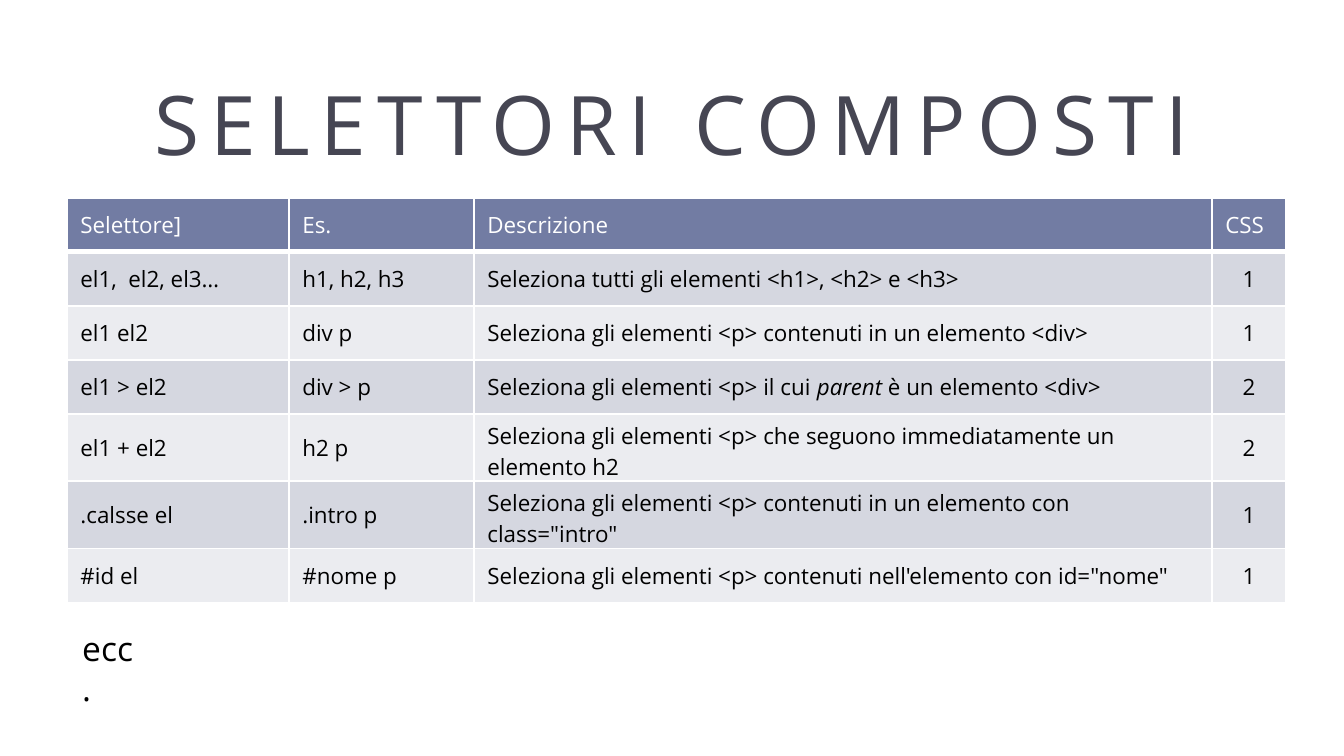
from lxml import etree
from pptx import Presentation
from pptx import util as u
from pptx.dml import color
from pptx.enum import text
from pptx.oxml import ns

PX = 914400 / 134.4
FONT = "Open Sans"
COLORS = {
    "title": "464653",
    "header": "727CA3",
    "odd": "D5D7E0",
    "even": "EBECF0",
    "light": "FFFFFF",
    "dark": "000000",
}
COLUMNS = [222, 185, 738, 74]
ROW_HEIGHT = 54
ROWS = [
    ["Selettore]", "Es.", "Descrizione", "CSS"],
    ["el1,  el2, el3…", "h1, h2, h3", "Seleziona tutti gli elementi <h1>, <h2> e <h3>", "1"],
    ["el1 el2", "div p", "Seleziona gli elementi <p> contenuti in un elemento <div>", "1"],
    ["el1 > el2", "div > p",
     ["Seleziona gli elementi <p> il cui ", "parent", " è un elemento <div>"], "2"],
    ["el1 + el2", "h2 p",
     "Seleziona gli elementi <p> che seguono immediatamente un elemento h2", "2"],
    [".calsse el", ".intro p",
     'Seleziona gli elementi <p> contenuti in un elemento con class="intro"', "1"],
    ["#id el", "#nome p",
     "Seleziona gli elementi <p> contenuti nell'elemento con id=\"nome\"", "1"],
]


def px(length):
    return u.Emu(round(length * PX))


def rgb(name):
    return color.RGBColor.from_string(COLORS[name])


def write(frame, content, size=12, fill="dark", align=text.PP_ALIGN.LEFT, spacing=0):
    paragraph = frame.paragraphs[0]
    paragraph.alignment = align
    pieces = [content] if isinstance(content, str) else content
    for index, piece in enumerate(pieces):
        run = paragraph.add_run()
        run.text = piece
        run.font.name = FONT
        run.font.size = u.Pt(size)
        run.font.bold = False
        run.font.italic = index % 2 == 1
        run.font.color.rgb = rgb(fill)
        if spacing:
            run.font._element.set("spc", str(spacing * 100))


def add_text(slide, box, content, anchor=text.MSO_ANCHOR.TOP, **style):
    frame = slide.shapes.add_textbox(*map(px, box)).text_frame
    frame.word_wrap = True
    frame.vertical_anchor = anchor
    write(frame, content, **style)


def set_borders(cell, is_header):
    properties = cell._tc.get_or_add_tcPr()
    for position, side in enumerate(["lnL", "lnR", "lnT", "lnB"]):
        width = 3 if is_header and side == "lnB" else 1
        line = etree.Element(ns.qn(f"a:{side}"), w=str(u.Pt(width)))
        fill = etree.SubElement(line, ns.qn("a:solidFill"))
        etree.SubElement(fill, ns.qn("a:srgbClr"), val=COLORS["light"])
        properties.insert(position, line)


def add_selector_table(slide, left, top):
    size = px(sum(COLUMNS)), px(ROW_HEIGHT * len(ROWS))
    table = slide.shapes.add_table(len(ROWS), len(COLUMNS), px(left), px(top), *size).table
    for column, width in zip(table.columns, COLUMNS):
        column.width = px(width)
    for row_index, row in enumerate(ROWS):
        table.rows[row_index].height = px(ROW_HEIGHT)
        is_header = row_index == 0
        background = "header" if is_header else "odd" if row_index % 2 else "even"
        for column_index, content in enumerate(row):
            cell = table.cell(row_index, column_index)
            cell.vertical_anchor = text.MSO_ANCHOR.MIDDLE
            cell.fill.solid()
            cell.fill.fore_color.rgb = rgb(background)
            set_borders(cell, is_header)
            centred = not is_header and column_index == len(COLUMNS) - 1
            write(cell.text_frame, content, fill="light" if is_header else "dark",
                  align=text.PP_ALIGN.CENTER if centred else text.PP_ALIGN.LEFT)


def main():
    presentation = Presentation()
    presentation.slide_width, presentation.slide_height = px(1344), px(756)
    slide = presentation.slides.add_slide(presentation.slide_layouts[6])
    add_text(slide, (67, 60, 1210, 126), "SELETTORI COMPOSTI", size=44, fill="title",
             align=text.PP_ALIGN.CENTER, anchor=text.MSO_ANCHOR.MIDDLE, spacing=6)
    add_selector_table(slide, 67, 198)
    add_text(slide, (69, 621, 86, 54), "ecc.", size=18)
    presentation.save("out.pptx")


if __name__ == "__main__":
    main()
